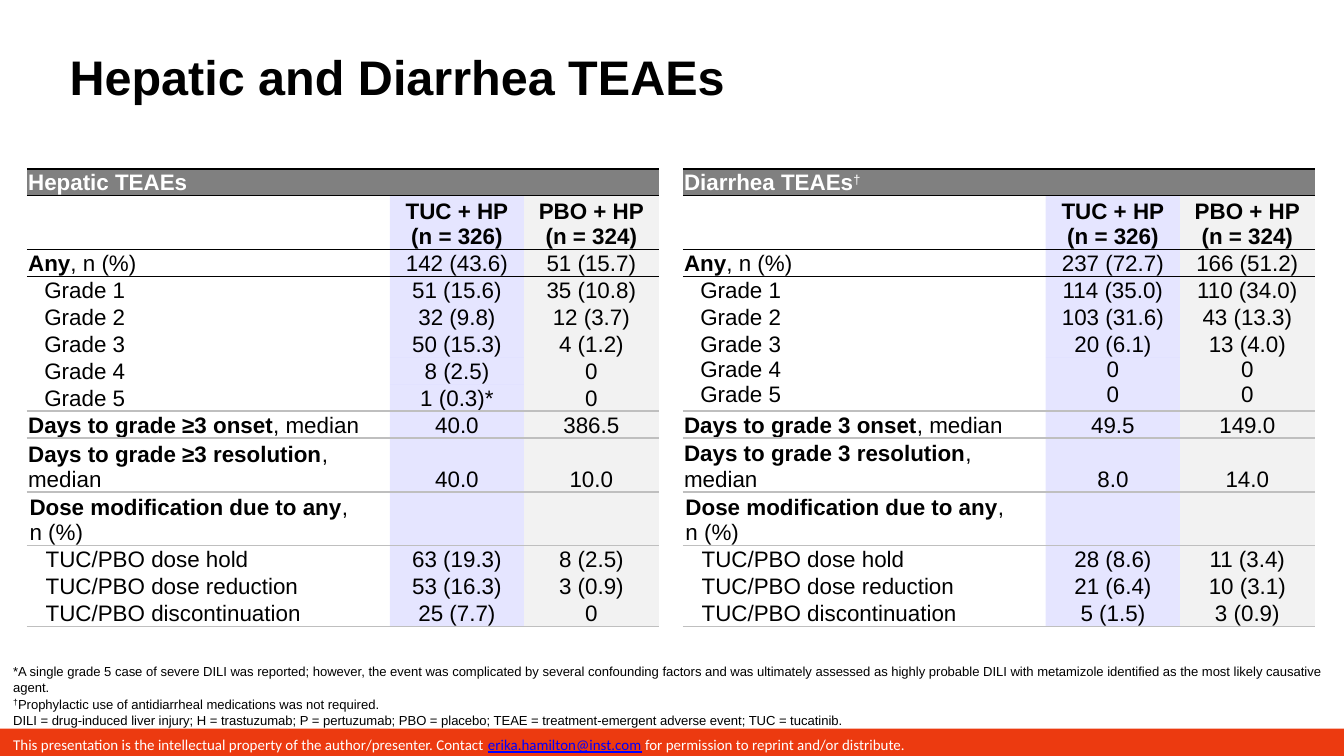
from lxml.etree import SubElement
from pptx import Presentation
from pptx.dml.color import RGBColor
from pptx.enum.shapes import MSO_SHAPE
from pptx.enum.text import MSO_ANCHOR, PP_ALIGN
from pptx.oxml.ns import qn
from pptx.util import Pt

BLACK = RGBColor(0, 0, 0)
WHITE = RGBColor(255, 255, 255)
GRAY = RGBColor(0x80, 0x80, 0x80)
RULE = RGBColor(0xBF, 0xBF, 0xBF)
PALE = RGBColor(0xF2, 0xF2, 0xF2)
BLUE = RGBColor(0, 0, 255)
ORANGE = RGBColor(0xEC, 0x3A, 0x10)

NO_STYLE = "{2D5ABB26-0587-4C30-8999-92F81FD0307C}"
ROW_H = 14.4
COL_WIDTHS = (194.4, 72, 72)
COLUMN_HEADS = ("", "TUC + HP\v(n = 326)", "PBO + HP\v(n = 324)")

HEPATIC = [
    [
        (1, "Any|, n (%)", "142 (43.6)", "51 (15.7)"),
        (1, "Grade 1", "51 (15.6)", "35 (10.8)"),
        (1, "Grade 2", "32 (9.8)", "12 (3.7)"),
        (1, "Grade 3", "50 (15.3)", "4 (1.2)"),
        (1, "Grade 4", "8 (2.5)", "0"),
        (1, "Grade 5", "1 (0.3)*", "0"),
    ],
    [(1, "Days to grade ≥3 onset|, median", "40.0", "386.5")],
    [(2, "Days to grade ≥3 resolution|,\nmedian", "40.0", "10.0")],
    [
        (2, "Dose modification due to any|,\nn (%)", "", ""),
        (1, "TUC/PBO dose hold", "63 (19.3)", "8 (2.5)"),
        (1, "TUC/PBO dose reduction", "53 (16.3)", "3 (0.9)"),
        (1, "TUC/PBO discontinuation", "25 (7.7)", "0"),
    ],
]
DIARRHEA = [
    [
        (1, "Any|, n (%)", "237 (72.7)", "166 (51.2)"),
        (1, "Grade 1", "114 (35.0)", "110 (34.0)"),
        (1, "Grade 2", "103 (31.6)", "43 (13.3)"),
        (1, "Grade 3", "20 (6.1)", "13 (4.0)"),
        (2, "Grade 4\nGrade 5", "0\n0", "0\n0"),
    ],
    [(1, "Days to grade 3 onset|, median", "49.5", "149.0")],
    [(2, "Days to grade 3 resolution|, median", "8.0", "14.0")],
    [
        (2, "Dose modification due to any|,\nn (%)", "", ""),
        (1, "TUC/PBO dose hold", "28 (8.6)", "11 (3.4)"),
        (1, "TUC/PBO dose reduction", "21 (6.4)", "10 (3.1)"),
        (1, "TUC/PBO discontinuation", "5 (1.5)", "3 (0.9)"),
    ],
]
FOOTNOTES = [
    [("*A single grade 5 case of severe DILI was reported; however, the event was "
      "complicated by several confounding factors and was ultimately assessed as highly "
      "probable DILI with metamizole identified as the most likely causative agent.", {})],
    [("†", {"size": 8, "raised": True}),
     ("Prophylactic use of antidiarrheal medications was not required.", {})],
    [("DILI = drug-induced liver injury; H = trastuzumab; P = pertuzumab; PBO = placebo; "
      "TEAE = treatment-emergent adverse event; TUC = tucatinib.", {})],
]
NOTICE = [[
    ("This presentation is the intellectual property of the author/presenter. Contact ", {}),
    ("erika.hamilton@inst.com", {"color": BLUE, "underline": True}),
    (" for permission to reprint and/or distribute.", {}),
]]


def format_run(r, size=12, font="Arial", color=BLACK, bold=False, underline=False, raised=False):
    r.font.size = Pt(size)
    r.font.name = font
    r.font.color.rgb = color
    r.font.bold = bold
    r.font.underline = underline
    if raised:
        r._r.get_or_add_rPr().set("baseline", "30000")


def write(tf, paragraphs, align=PP_ALIGN.LEFT, indent=0, **fmt):
    for i, runs in enumerate(paragraphs):
        p = tf.paragraphs[0] if i == 0 else tf.add_paragraph()
        p.alignment = align
        if indent:
            p._p.get_or_add_pPr().set("marL", str(Pt(indent)))
        for text, own in runs:
            for j, line in enumerate(text.split("\v")):
                if j:
                    p.add_line_break()
                r = p.add_run()
                r.text = line
                format_run(r, **{**fmt, **own})


def plain(text):
    return [[(line, {})] for line in text.split("\n")] if text else []


def label_runs(text):
    lead, _, rest = text.partition("|")
    first, *others = rest.split("\n")
    return [[(lead, {"bold": True}), (first, {})]] + [[(line, {})] for line in others]


def add_text(slide, x, y, w, h, paragraphs, anchor=MSO_ANCHOR.TOP, **fmt):
    tf = slide.shapes.add_textbox(Pt(x), Pt(y), Pt(w), Pt(h)).text_frame
    tf.word_wrap = True
    tf.vertical_anchor = anchor
    write(tf, paragraphs, **fmt)


def add_bar(slide, x, y, w, h, paragraphs, fill, **fmt):
    sp = slide.shapes.add_shape(MSO_SHAPE.RECTANGLE, Pt(x), Pt(y), Pt(w), Pt(h))
    sp.shadow.inherit = False
    sp.fill.solid()
    sp.fill.fore_color.rgb = fill
    sp.line.fill.background()
    sp.text_frame.word_wrap = True
    sp.text_frame.vertical_anchor = MSO_ANCHOR.TOP
    write(sp.text_frame, paragraphs, **fmt)


def style_cell(cell, fill=None, alpha=None, top=None, bottom=None, inset=0.7, anchor=MSO_ANCHOR.BOTTOM):
    cell.margin_left = cell.margin_right = Pt(inset)
    cell.margin_top = cell.margin_bottom = 0
    cell.vertical_anchor = anchor
    tcPr = cell._tc.get_or_add_tcPr()
    for tag, color in (("a:lnT", top), ("a:lnB", bottom)):
        if color is not None:
            ln = SubElement(tcPr, qn(tag), w=str(Pt(1)))
            SubElement(SubElement(ln, qn("a:solidFill")), qn("a:srgbClr"), val=str(color))
    if fill is None:
        cell.fill.background()
        return
    cell.fill.solid()
    cell.fill.fore_color.rgb = fill
    if alpha:
        clr = tcPr.find(qn("a:solidFill")).find(qn("a:srgbClr"))
        SubElement(clr, qn("a:alpha"), val=str(alpha * 1000))


def fill_row(table, i, texts, **look):
    column_fills = ((None, None), (BLUE, 10), (PALE, None))
    for j, (fill, alpha) in enumerate(column_fills):
        style_cell(table.cell(i, j), fill, alpha, **look)
    for j in (1, 2):
        write(table.cell(i, j).text_frame, plain(texts[j]), align=PP_ALIGN.CENTER, bold=i == 1)
    tf = table.cell(i, 0).text_frame
    if "|" in texts[0]:
        write(tf, label_runs(texts[0]))
    else:
        write(tf, plain(texts[0]), indent=8.64)


def add_event_table(slide, x, y, heading, sections):
    heights = [1, 2] + [row[0] for section in sections for row in section]
    frame = slide.shapes.add_table(len(heights), 3, Pt(x), Pt(y),
                                   Pt(sum(COL_WIDTHS)), Pt(ROW_H * sum(heights)))
    table = frame.table
    table.first_row = table.horz_banding = False
    table._tbl.tblPr.find(qn("a:tableStyleId")).text = NO_STYLE
    for col, width in zip(table.columns, COL_WIDTHS):
        col.width = Pt(width)
    for row, units in zip(table.rows, heights):
        row.height = Pt(ROW_H * units)

    for j in range(3):
        style_cell(table.cell(0, j), GRAY, top=BLACK, bottom=BLACK)
    table.cell(0, 0).merge(table.cell(0, 2))
    write(table.cell(0, 0).text_frame, [heading], color=WHITE, bold=True)
    fill_row(table, 1, COLUMN_HEADS, top=BLACK, bottom=BLACK)

    i = 2
    for section in sections:
        for k, (_, *texts) in enumerate(section):
            top = None if k else BLACK if i == 2 else RULE
            bottom = RULE if k == len(section) - 1 else None
            anchor = MSO_ANCHOR.TOP if "\n" in texts[1] else MSO_ANCHOR.BOTTOM
            inset = 1.44 if section is sections[-1] else 0.7
            fill_row(table, i, texts, top=top, bottom=bottom, inset=inset, anchor=anchor)
            i += 1


def main():
    prs = Presentation()
    prs.slide_width, prs.slide_height = Pt(720), Pt(405)
    slide = prs.slides.add_slide(prs.slide_layouts[6])
    add_text(slide, 30.2, 3.6, 457.2, 56.2, plain("Hepatic and Diarrhea TEAEs"),
             anchor=MSO_ANCHOR.BOTTOM, size=26, bold=True)
    add_text(slide, 0, 352, 720, 41, FOOTNOTES, size=7)
    add_bar(slide, 0, 390.4, 720, 14.6, NOTICE, ORANGE, size=8, font="Calibri", color=WHITE)
    add_event_table(slide, 365.8, 90.4, [("Diarrhea TEAEs", {}), ("†", {"bold": False, "raised": True})],
                    DIARRHEA)
    add_event_table(slide, 14.4, 90.4, [("Hepatic TEAEs", {})], HEPATIC)
    prs.save("out.pptx")


if __name__ == "__main__":
    main()
